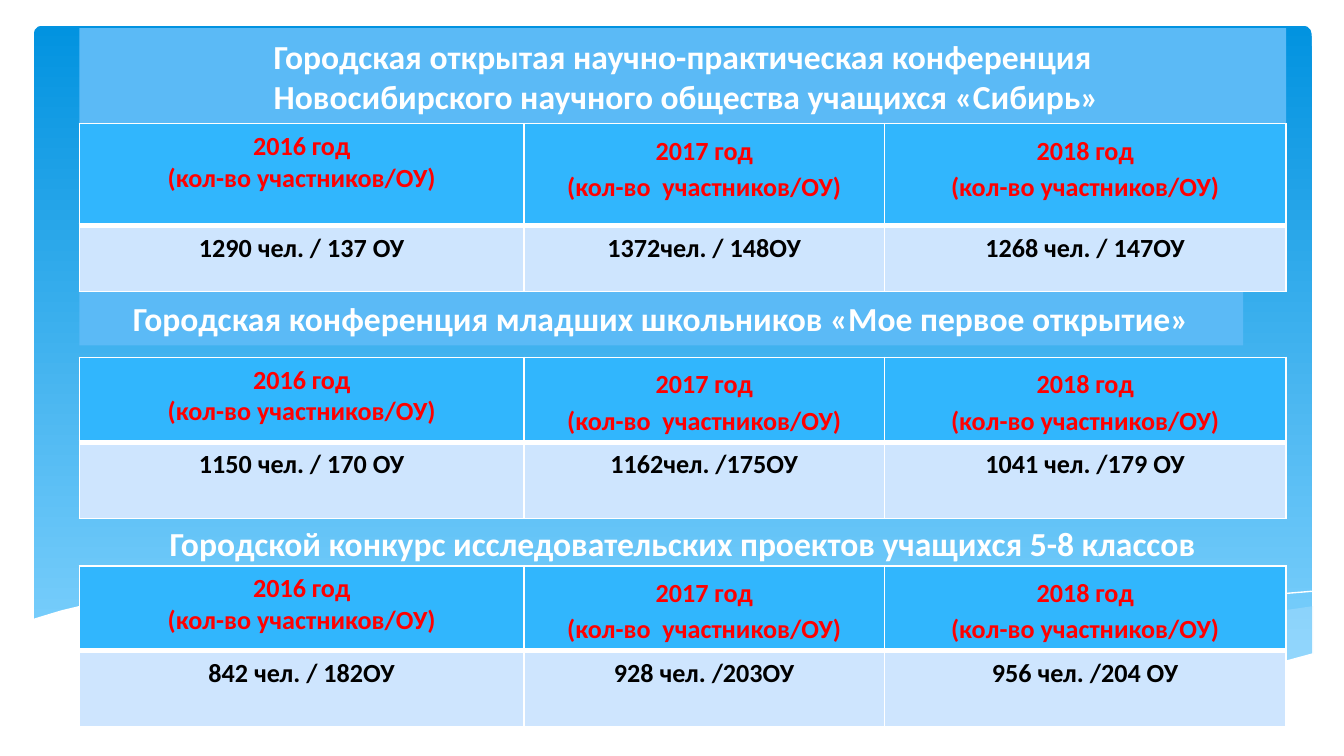
from pptx import Presentation
from pptx.dml.color import RGBColor
from pptx.enum.shapes import MSO_SHAPE as Shape
from pptx.enum.text import MSO_ANCHOR as Anchor, PP_ALIGN as Align
from pptx.oxml import parse_xml
from pptx.oxml.ns import nsdecls, qn
from pptx.util import Inches, Pt

BLUE, BAND, HEAD, PALE = "0293E0", "5BBAF6", "31B6FD", "CEE5FE"
WHITE, RED, BLACK, MIST = "FFFFFF", "FF0000", "000000", "C6E7FC"


def color(code):
    return RGBColor.from_string(code)


def write(frame, text, size, code):
    frame.text = text
    for par in frame.paragraphs:
        par.alignment = Align.CENTER
        font = par.runs[0].font
        font.name, font.size, font.bold = "Calibri", Pt(size), True
        font.color.rgb = color(code)


# Slide in 16:9 format
prs = Presentation()
prs.slide_width, prs.slide_height = Inches(10), Inches(10 * 9 / 16)
slide = prs.slides.add_slide(prs.slide_layouts[6])
shapes = slide.shapes

# Gradient panel
panel = shapes.add_shape(Shape.ROUNDED_RECTANGLE, Inches(0.25), Inches(0.19),
                         Inches(9.51), Inches(4.95))
panel.adjustments[0] = 0.013
panel.shadow.inherit = False
panel.line.fill.background()
panel.fill.gradient()
panel.fill.gradient_angle = 270
for stop, pos, code in zip(panel.fill.gradient_stops, (0, 1), (BLUE, "83D3FE")):
    stop.position = pos
    stop.color.rgb = color(code)

# Waves: fill, opacity in percent, points; no fill means an open white line
waves = [
    (MIST, 29, [(9.77, 4.51), (9.36, 4.57), (8.92, 4.63), (8.34, 4.74), (7.8, 4.83),
                (7.3, 4.91), (6.62, 5), (7.06, 5.05), (7.58, 5.08), (8.15, 5.1),
                (8.64, 5.08), (9.07, 5.03), (9.44, 4.96), (9.77, 4.87)]),
    (MIST, 40, [(8.94, 5.06), (8.38, 5), (7.76, 4.92), (7.07, 4.81), (6.3, 4.68),
                (5.7, 4.57), (5.15, 4.5), (4.65, 4.45), (4.2, 4.42), (3.8, 4.41),
                (3.28, 4.41), (2.87, 4.45), (3.43, 4.51), (4.05, 4.6), (4.5, 4.68),
                (5.3, 4.82), (6.02, 4.93), (6.66, 5.01), (7.23, 5.07), (7.74, 5.1),
                (8.39, 5.1), (8.94, 5.06)]),
    (None, 0, [(3.1, 4.48), (3.44, 4.44), (3.88, 4.42), (4.51, 4.42), (5.11, 4.45),
               (5.82, 4.51), (6.66, 4.61), (7.61, 4.76), (8.32, 4.89), (9.08, 5.05)]),
    (None, 0, [(6.14, 4.94), (6.73, 4.82), (7.49, 4.68), (8.07, 4.59), (8.67, 4.5),
               (9.11, 4.45), (9.52, 4.42), (9.76, 4.4)]),
    (WHITE, 100, [(9.77, 4.86), (9.4, 4.96), (8.99, 5.03), (8.5, 5.08), (8.09, 5.09),
                  (7.61, 5.08), (7.08, 5.04), (6.48, 4.98), (5.79, 4.89), (5.03, 4.76),
                  (4.47, 4.66), (3.91, 4.57), (3.4, 4.49), (2.92, 4.44), (2.5, 4.41),
                  (2.11, 4.39), (1.77, 4.39), (1.32, 4.41), (0.95, 4.44), (0.67, 4.49),
                  (0.46, 4.54), (0.36, 4.57), (0.23, 4.61), (0.23, 5.48), (9.77, 5.48)]),
]
for code, part, points in waves:
    first, *rest = [(Inches(x), Inches(y)) for x, y in points]
    pen = shapes.build_freeform(*first)
    pen.add_line_segments(rest, close=code is not None)
    wave = pen.convert_to_shape()
    wave.shadow.inherit = False
    if code is None:
        wave.fill.background()
        wave.line.color.rgb = color(WHITE)
        wave.line.width = Pt(0)
        continue
    wave.line.fill.background()
    wave.fill.solid()
    wave.fill.fore_color.rgb = color(code)
    if part < 100:
        tint = wave.fill._xPr.find(qn("a:solidFill"))[0]
        tint.append(parse_xml(f'<a:alpha {nsdecls("a")} val="{part * 1000}"/>'))

# Titles: text, top, width, height, fill
titles = [
    ("Городская открытая научно-практическая конференция\n"
     " Новосибирского научного общества учащихся «Сибирь»", 0.21, 8.98, 0.71, BAND),
    ("Городская конференция младших школьников «Мое первое открытие»",
     2.17, 8.66, 0.4, BAND),
    ("Городской конкурс исследовательских проектов учащихся 5-8 классов",
     3.84, 8.98, 0.4, None),
]
for text, top, width, height, code in titles:
    box = (Inches(0.59), Inches(top), Inches(width), Inches(height))
    if code:
        title = shapes.add_shape(Shape.RECTANGLE, *box)
        title.shadow.inherit = False
        title.line.fill.background()
        title.fill.solid()
        title.fill.fore_color.rgb = color(code)
    else:
        title = shapes.add_textbox(*box)
    title.text_frame.word_wrap = True
    title.text_frame.vertical_anchor = Anchor.MIDDLE
    write(title.text_frame, text, 18, WHITE)

# Tables: top, row heights, counts for each year
heads = ["2016 год\n(кол-во участников/ОУ)",
         "2017 год\n(кол-во  участников/ОУ)",
         "2018 год\n(кол-во участников/ОУ)"]
tables = [
    (0.92, (0.76, 0.49), ["1290 чел. / 137 ОУ", "1372чел. / 148ОУ", "1268 чел. / 147ОУ"]),
    (2.66, (0.63, 0.57), ["1150 чел. / 170 ОУ", "1162чел. /175ОУ", "1041 чел. /179 ОУ"]),
    (4.21, (0.63, 0.57), ["842 чел. / 182ОУ", "928 чел. /203ОУ", "956 чел. /204 ОУ"]),
]
for top, sizes, counts in tables:
    table = shapes.add_table(2, 3, Inches(0.59), Inches(top),
                             Inches(8.98), Inches(sum(sizes))).table
    for col, width in zip(table.columns, (3.31, 2.68, 2.99)):
        col.width = Inches(width)
    for r, texts in enumerate((heads, counts)):
        table.rows[r].height = Inches(sizes[r])
        for c, text in enumerate(texts):
            cell = table.cell(r, c)
            cell.margin_bottom = 0
            write(cell.text_frame, text, 14, BLACK if r else RED)
            if r == 0 and c > 0:
                for par in cell.text_frame.paragraphs:
                    par.line_spacing = 1.15
            # White borders, thick between the two rows
            thick = "lnT" if r else "lnB"
            props = cell._tc.get_or_add_tcPr()
            for side in ("lnL", "lnR", "lnT", "lnB"):
                props.append(parse_xml(
                    f'<a:{side} {nsdecls("a")} w="{Pt(3 if side == thick else 1)}">'
                    f'<a:solidFill><a:srgbClr val="{WHITE}"/></a:solidFill></a:{side}>'))
            cell.fill.solid()
            cell.fill.fore_color.rgb = color(PALE if r else HEAD)

prs.save("out.pptx")
